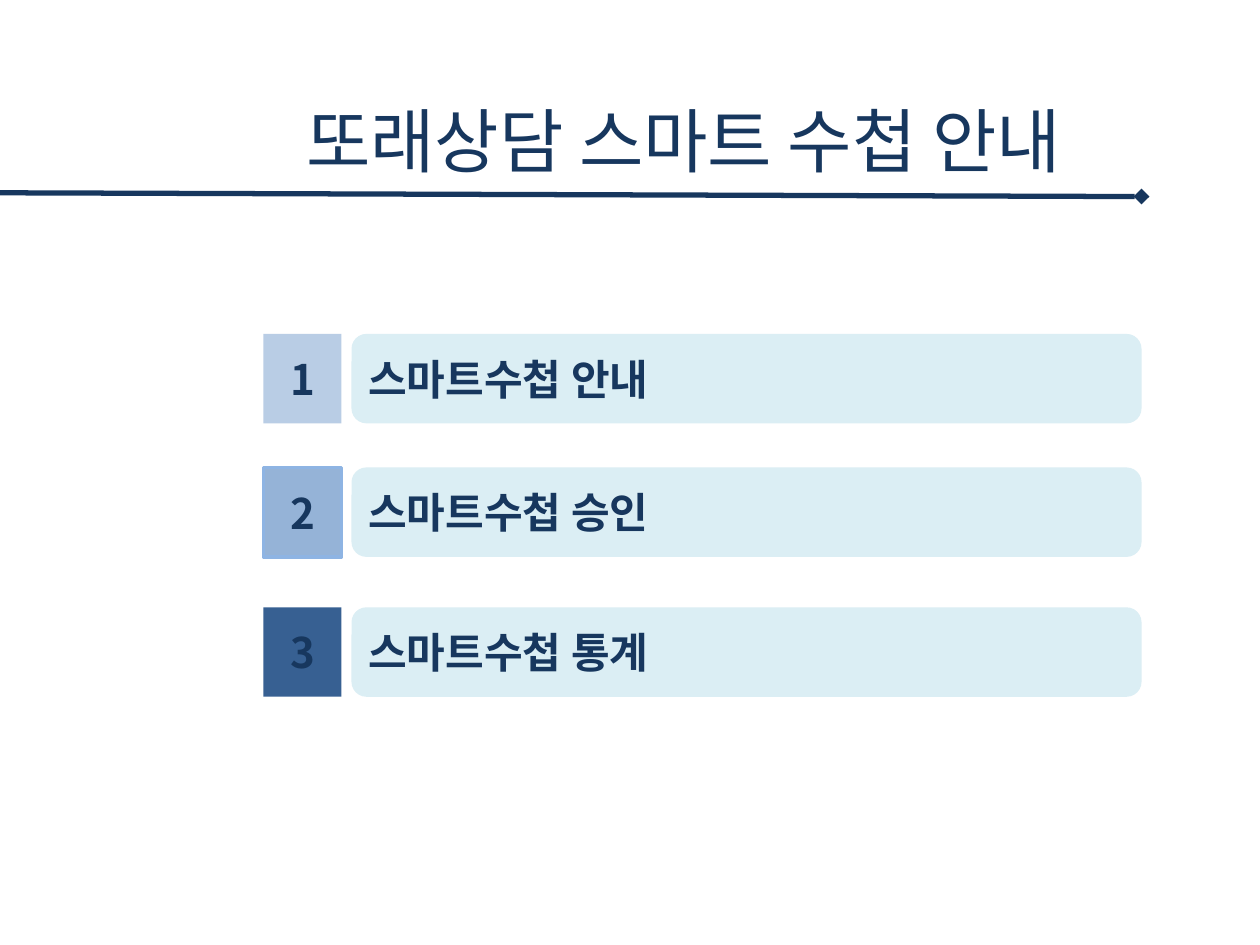
"""Build the contents slide of the smart notebook guide."""
from pptx import Presentation
from pptx.dml.color import RGBColor
from pptx.enum.shapes import MSO_CONNECTOR, MSO_SHAPE as Shape
from pptx.enum.text import MSO_ANCHOR as Anchor, PP_ALIGN as Align
from pptx.oxml.ns import qn
from pptx.util import Inches, Pt
from lxml.etree import SubElement

FONT = "Noto Sans CJK KR"
NAVY = RGBColor(0x17, 0x37, 0x5E)
PALE_CYAN = RGBColor(0xDB, 0xEE, 0xF4)
LIGHT_BLUE = RGBColor(0xB9, 0xCD, 0xE5)
MID_BLUE = RGBColor(0x95, 0xB3, 0xD7)
EDGE_BLUE = RGBColor(0x8E, 0xB4, 0xE3)
DEEP_BLUE = RGBColor(0x37, 0x60, 0x92)

BADGE_LEFT, BADGE_WIDTH = 2.09, 0.62
BAR_LEFT, BAR_WIDTH = 2.79, 6.27
ROW_HEIGHT = 0.71
TOPICS = [
    (2.65, "스마트수첩 안내", LIGHT_BLUE, None),
    (3.71, "스마트수첩 승인", MID_BLUE, EDGE_BLUE),
    (4.82, "스마트수첩 통계", DEEP_BLUE, None),
]


def write(shape, text, size, align, bold=False):
    """Put one formatted line of text in a shape."""
    frame = shape.text_frame
    frame.text = text
    frame.word_wrap = True
    frame.vertical_anchor = Anchor.MIDDLE
    paragraph = frame.paragraphs[0]
    paragraph.alignment = align
    font = paragraph.font
    font.name, font.size, font.bold = FONT, Pt(size), bold
    font.color.rgb = NAVY
    defaults = paragraph._p.get_or_add_pPr().find(qn("a:defRPr"))
    SubElement(defaults, qn("a:ea")).set("typeface", FONT)


def add_title(slide, text):
    """Place and format the slide title."""
    title = slide.shapes.title
    title.left, title.top = Inches(1.87), Inches(0.6)
    title.width, title.height = Inches(7.11), Inches(1.01)
    write(title, text, 40, Align.CENTER)


def add_box(slide, preset, left, top, width, fill, edge=None):
    """Add a filled box of row height, with an optional edge."""
    box = slide.shapes.add_shape(
        preset, Inches(left), Inches(top), Inches(width), Inches(ROW_HEIGHT))
    box.shadow.inherit = False
    box.fill.solid()
    box.fill.fore_color.rgb = fill
    if edge is None:
        box.line.fill.background()
    else:
        box.line.color.rgb = edge
        box.line.width = Pt(2)
    return box


def add_topic(slide, number, top, text, fill, edge):
    """Add a numbered badge and its topic bar."""
    badge = add_box(slide, Shape.RECTANGLE, BADGE_LEFT, top, BADGE_WIDTH, fill, edge)
    write(badge, str(number), 24, Align.CENTER, bold=True)
    bar = add_box(slide, Shape.ROUNDED_RECTANGLE, BAR_LEFT, top, BAR_WIDTH, PALE_CYAN)
    write(bar, text, 24, Align.LEFT, bold=True)


def add_title_rule(slide):
    """Add the line under the title, ending in a diamond."""
    rule = slide.shapes.add_connector(
        MSO_CONNECTOR.STRAIGHT,
        Inches(-0.04), Inches(1.53), Inches(9.06), Inches(1.56))
    rule.line.color.rgb = NAVY
    rule.line.width = Pt(3)
    SubElement(rule.line._get_or_add_ln(), qn("a:tailEnd")).set("type", "diamond")
    SubElement(rule._element.spPr, qn("a:effectLst"))


def main():
    """Build and save the slide."""
    deck = Presentation()
    deck.slide_width, deck.slide_height = Inches(10), Inches(7.5)
    slide = deck.slides.add_slide(deck.slide_layouts[5])
    add_title(slide, "또래상담 스마트 수첩 안내")
    add_title_rule(slide)
    for number, topic in enumerate(TOPICS, start=1):
        add_topic(slide, number, *topic)
    deck.save("out.pptx")


if __name__ == "__main__":
    main()
